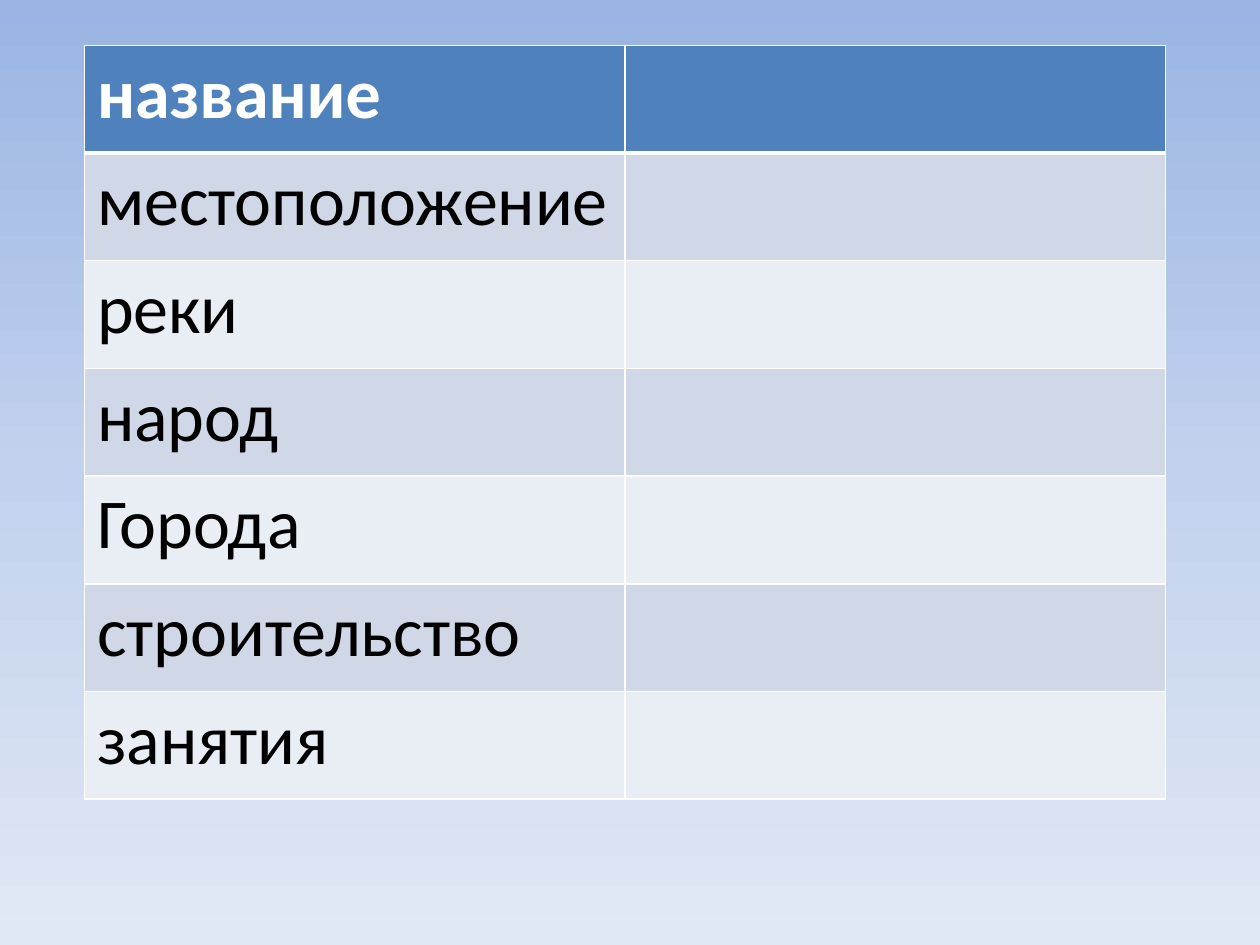
import dataclasses
import copy

import pptx
import pptx.dml.color
import pptx.oxml.ns
import pptx.oxml.xmlchemy
import pptx.util
from lxml import etree

Pt = pptx.util.Pt
RGBColor = pptx.dml.color.RGBColor
qn = pptx.oxml.ns.qn

WHITE = RGBColor(0xFF, 0xFF, 0xFF)
BLACK = RGBColor(0x00, 0x00, 0x00)
HEADER_BLUE = RGBColor(0x4F, 0x81, 0xBD)
BAND_DARK = RGBColor(0xD0, 0xD8, 0xE8)
BAND_LIGHT = RGBColor(0xE9, 0xED, 0xF4)
SKY_STOPS = [
    (0, RGBColor(0x9A, 0xB5, 0xE4)),
    (0.5, RGBColor(0xC2, 0xD1, 0xED)),
    (1, RGBColor(0xE1, 0xE8, 0xF5)),
]

LEFT, TOP = 48.24, 25.92
COL_W, ROW_H = 308.88, 61.55
COLS = 2
THIN, THICK = 1, 3


@dataclasses.dataclass
class Row:
    label: str
    fill: RGBColor
    color: RGBColor = BLACK
    bold: bool = False
    top: float = THIN
    bottom: float = THIN


LABELS = ["местоположение", "реки", "народ", "Города", "строительство", "занятия"]
ROWS = [Row("название", HEADER_BLUE, WHITE, bold=True, bottom=THICK)] + [
    Row(label, BAND_LIGHT if i % 2 else BAND_DARK, top=THIN if i else THICK)
    for i, label in enumerate(LABELS)
]


def set_background(s) -> None:
    """Fill the slide with a top-to-bottom gradient."""
    fill = s.background.fill
    fill.gradient()
    fill.gradient_angle = 270
    gs_lst = s.element.find(".//" + qn("a:gsLst"))
    gs_lst.append(copy.deepcopy(gs_lst[0]))
    for stop, (position, color) in zip(fill.gradient_stops, SKY_STOPS):
        stop.position = position
        stop.color.rgb = color


def set_borders(cell, top: float, bottom: float) -> None:
    tc_pr = cell._tc.get_or_add_tcPr()
    for side, width in (("L", THIN), ("R", THIN), ("T", top), ("B", bottom)):
        ln = etree.SubElement(tc_pr, qn(f"a:ln{side}"), w=str(int(Pt(width))))
        solid = etree.SubElement(ln, qn("a:solidFill"))
        etree.SubElement(solid, qn("a:srgbClr"), val=str(WHITE))


def put_text(tf, text: str, *, size: float = 40, font: str = "Calibri",
             color: RGBColor = BLACK, bold: bool = False) -> None:
    r = tf.paragraphs[0].add_run()
    r.text = text
    r.font.size = Pt(size)
    r.font.name = font
    r.font.bold = bold
    r.font.color.rgb = color


def add_grid(s, rows: list[Row]) -> None:
    table = s.shapes.add_table(
        len(rows), COLS, Pt(LEFT), Pt(TOP), Pt(COL_W * COLS), Pt(ROW_H * len(rows))
    ).table
    for col in table.columns:
        col.width = Pt(COL_W)
    for row, tr in zip(rows, table.rows):
        tr.height = Pt(ROW_H)
        for cell in tr.cells:
            # Borders come before the fill in the cell properties
            set_borders(cell, row.top, row.bottom)
            cell.fill.solid()
            cell.fill.fore_color.rgb = row.fill
        put_text(tr.cells[0].text_frame, row.label, color=row.color, bold=row.bold)


def main() -> None:
    prs = pptx.Presentation()
    prs.slide_width, prs.slide_height = Pt(720), Pt(540)
    s = prs.slides.add_slide(prs.slide_layouts[6])

    # Background
    set_background(s)

    # Table with labels on the left and room for answers on the right
    add_grid(s, ROWS)

    prs.save("out.pptx")


if __name__ == "__main__":
    main()
